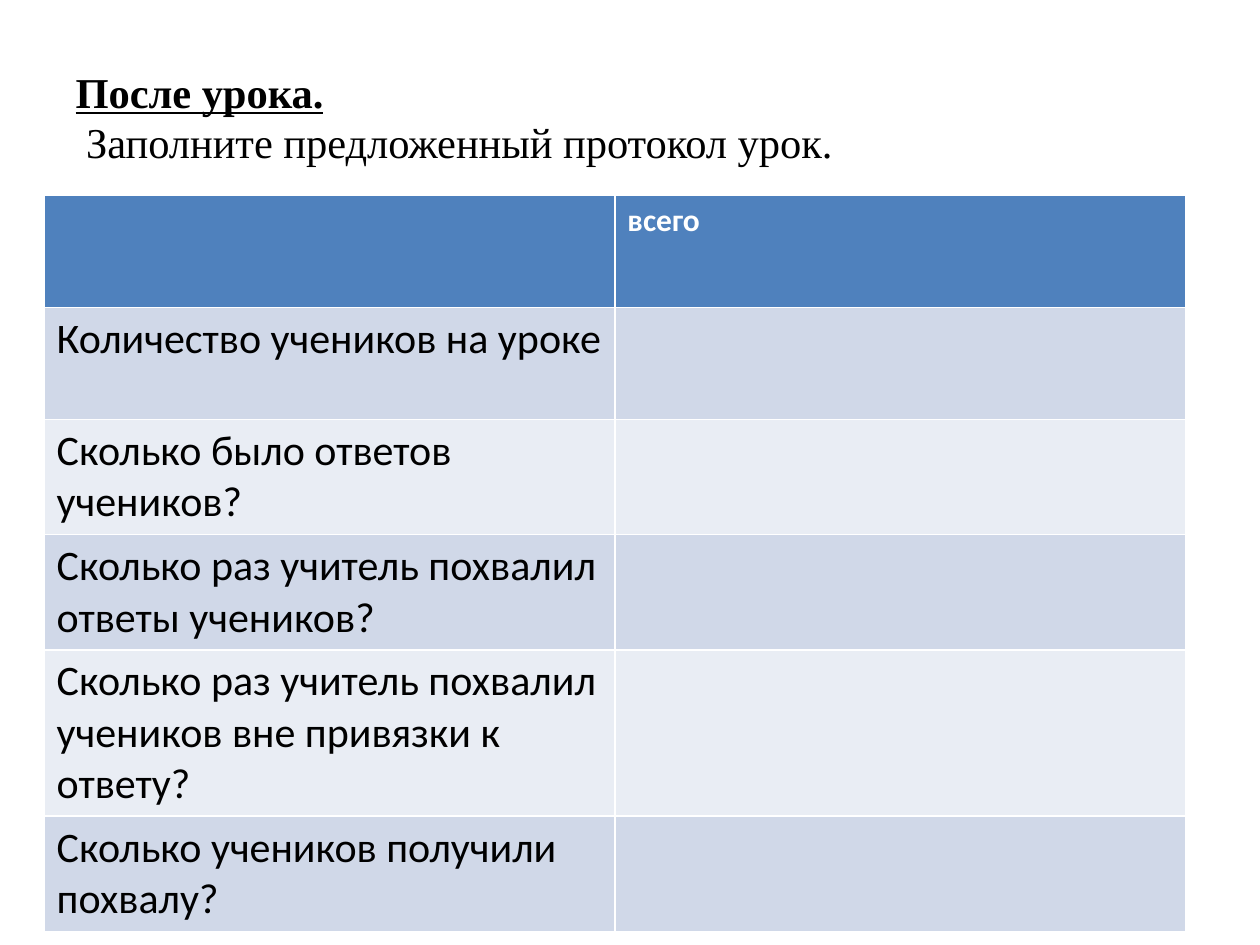
from pptx import Presentation
from pptx.dml.color import RGBColor
from pptx.enum.text import MSO_ANCHOR, PP_ALIGN
from pptx.util import Inches, Pt

COLORS = {
    "header": "4F81BD",
    "odd": "D0D8E8",
    "even": "E9EDF4",
    "white": "FFFFFF",
    "black": "000000",
}
TITLE_LINES = [
    ("После урока.", {"bold": True, "underline": True}),
    (" Заполните предложенный протокол урок.", {"bold": False, "underline": False}),
]
HEADER = "всего"
QUESTIONS = [
    "Количество учеников на уроке",
    "Сколько было ответов учеников?",
    "Сколько раз учитель похвалил ответы учеников?",
    "Сколько раз учитель похвалил учеников вне привязки к ответу?",
    "Сколько учеников получили похвалу?",
]


def color(name):
    return RGBColor.from_string(COLORS[name])


def write(para, text, color_name, **formats):
    span = para.add_run()
    span.text = text
    span.font.color.rgb = color(color_name)
    for name, value in formats.items():
        setattr(span.font, name, value)


def place_title(page, left, top, width, height):
    box = page.shapes.title
    box.left, box.top, box.width, box.height = left, top, width, height
    frame = box.text_frame
    frame.word_wrap = True
    frame.vertical_anchor = MSO_ANCHOR.MIDDLE
    for index, (text, formats) in enumerate(TITLE_LINES):
        para = frame.add_paragraph() if index else frame.paragraphs[0]
        para.alignment = PP_ALIGN.LEFT
        para.line_spacing = Pt(29)
        para.space_before = Pt(0)
        write(para, text, "black", name="Times New Roman", size=Pt(24.3), **formats)


def place_protocol(page, left, top, width, row_height):
    rows = len(QUESTIONS) + 1
    table = page.shapes.add_table(rows, 2, left, top, width, row_height * rows).table

    # Row fills: header, then alternating bands
    for index, row in enumerate(table.rows):
        row.height = row_height
        band = "header" if index == 0 else "odd" if index % 2 else "even"
        for cell in row.cells:
            cell.fill.solid()
            cell.fill.fore_color.rgb = color(band)

    # Header label and questions
    write(table.cell(0, 1).text_frame.paragraphs[0], HEADER, "white",
          name="Calibri", size=Pt(18), bold=True)
    for index, question in enumerate(QUESTIONS, start=1):
        write(table.cell(index, 0).text_frame.paragraphs[0], question, "black",
              name="Calibri", size=Pt(24), bold=False)


def main():
    deck = Presentation()
    deck.slide_width, deck.slide_height = Inches(10), Inches(7.5)
    page = deck.slides.add_slide(deck.slide_layouts[5])
    place_title(page, Inches(0.5), Inches(0.3), Inches(9), Inches(1.25))
    place_protocol(page, Inches(0.35), Inches(1.55), Inches(9.06), Inches(0.89))
    deck.save("out.pptx")


if __name__ == "__main__":
    main()
